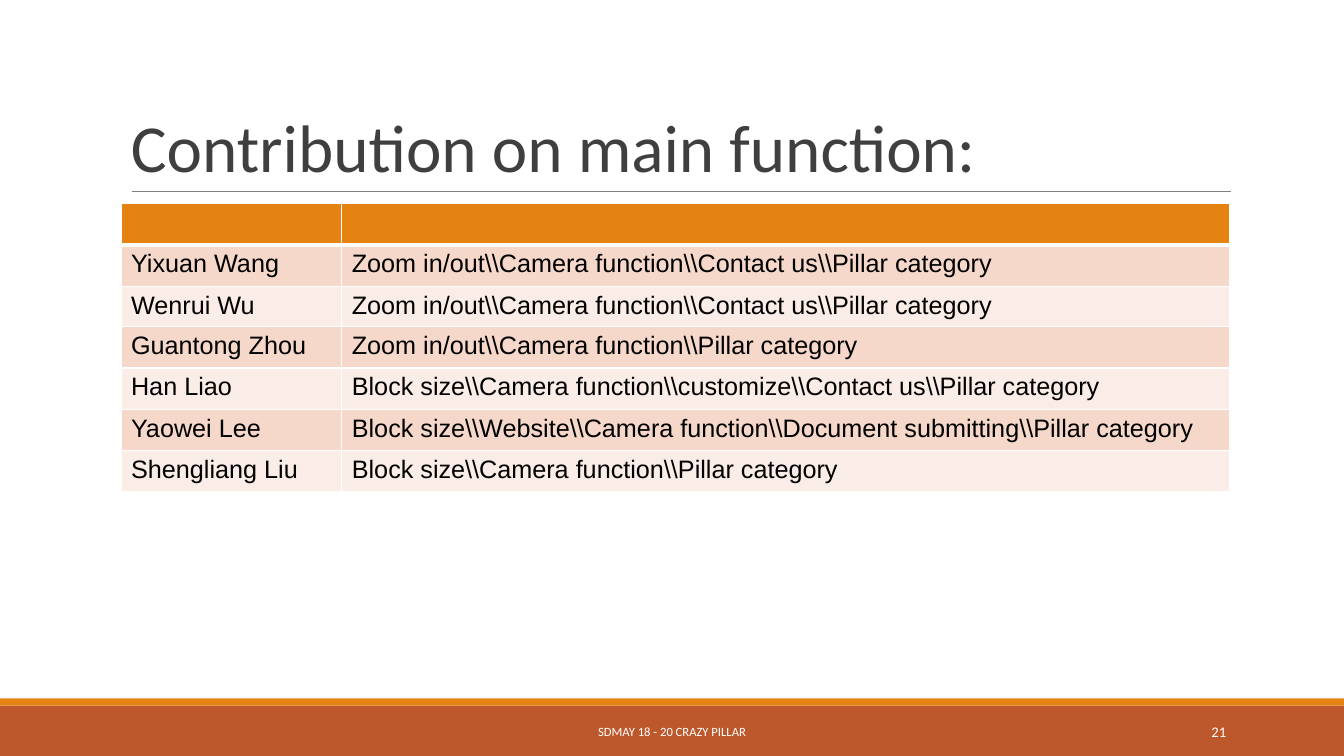
from lxml.etree import SubElement
from pptx import Presentation
from pptx.dml.color import RGBColor
from pptx.enum.shapes import MSO_CONNECTOR, MSO_SHAPE
from pptx.enum.text import MSO_ANCHOR, PP_ALIGN
from pptx.oxml import parse_xml
from pptx.oxml.ns import nsdecls, qn
from pptx.util import Inches, Pt


def paint(color, tint):
    color.rgb = RGBColor.from_string(tint)


def write(frame, text, size, face, tint, align=PP_ALIGN.LEFT):
    line = frame.paragraphs[0]
    line.alignment = align
    run = line.add_run()
    run.text = text
    run.font.size = Pt(size)
    run.font.name = face
    paint(run.font.color, tint)
    return line


deck = Presentation()
deck.slide_width, deck.slide_height = Inches(13.33), Inches(7.5)
slide = deck.slides.add_slide(deck.slide_layouts[6])
shapes = slide.shapes

for top, high, tint in [(7, 0.5, "BD582C"), (6.93, 0.07, "E48312")]:
    band = shapes.add_shape(MSO_SHAPE.RECTANGLE, 0, Inches(top), deck.slide_width, Inches(high))
    band.shadow.inherit = False
    band.fill.solid()
    paint(band.fill.fore_color, tint)
    band.line.fill.background()

rule = shapes.add_connector(MSO_CONNECTOR.STRAIGHT, Inches(1.31), Inches(1.9), Inches(12.21), Inches(1.9))
rule.line.width = Pt(0.75)
paint(rule.line.color, "7F7F7F")
SubElement(rule.element.spPr, qn("a:effectLst"))

labels = [
    ("Contribution on main function:", 1.2, 0.31, 11, 1.59, 48, "3F3F3F", PP_ALIGN.LEFT, MSO_ANCHOR.BOTTOM),
    ("SDMAY 18 - 20 CRAZY PILLAR", 4.03, 7.06, 5.27, 0.4, 9, "FFFFFF", PP_ALIGN.CENTER, MSO_ANCHOR.MIDDLE),
    ("21", 10.83, 7.06, 1.43, 0.4, 10.5, "FFFFFF", PP_ALIGN.RIGHT, MSO_ANCHOR.MIDDLE),
]
for text, left, top, wide, high, size, tint, align, anchor in labels:
    frame = shapes.add_textbox(Inches(left), Inches(top), Inches(wide), Inches(high)).text_frame
    frame.word_wrap = True
    frame.vertical_anchor = anchor
    line = write(frame, text, size, "Calibri", tint, align)
    if anchor == MSO_ANCHOR.BOTTOM:
        line.line_spacing = 0.85

tasks = [
    ("", ""),
    ("Yixuan Wang", r"Zoom in/out\\Camera function\\Contact us\\Pillar category"),
    ("Wenrui Wu", r"Zoom in/out\\Camera function\\Contact us\\Pillar category"),
    ("Guantong Zhou", r"Zoom in/out\\Camera function\\Pillar category"),
    ("Han Liao", r"Block size\\Camera function\\customize\\Contact us\\Pillar category"),
    ("Yaowei Lee", r"Block size\\Website\\Camera function\\Document submitting\\Pillar category"),
    ("Shengliang Liu", r"Block size\\Camera function\\Pillar category"),
]
table = shapes.add_table(len(tasks), 2, Inches(1.2), Inches(2.02), Inches(11), Inches(2.71)).table
table.first_row = table.horz_banding = False
for col, wide in zip(table.columns, (2.19, 8.81)):
    col.width = Inches(wide)

for r, task in enumerate(tasks):
    table.rows[r].height = Inches(0.25 if r == 2 else 0.41)
    for c, text in enumerate(task):
        cell = table.cell(r, c)
        props = cell._tc.get_or_add_tcPr()
        for side in "LRTB":
            thick = 3 if (r, side) in ((0, "B"), (1, "T")) else 1
            props.append(parse_xml(
                f'<a:ln{side} {nsdecls("a")} w="{Pt(thick)}"><a:solidFill>'
                f'<a:srgbClr val="FFFFFF"/></a:solidFill></a:ln{side}>'))
        cell.fill.solid()
        paint(cell.fill.fore_color, "E48312" if r == 0 else ("FAECE6", "F5D8CA")[r % 2])
        if text:
            write(cell.text_frame, text, 18, "Arial", "000000")

deck.save("out.pptx")
